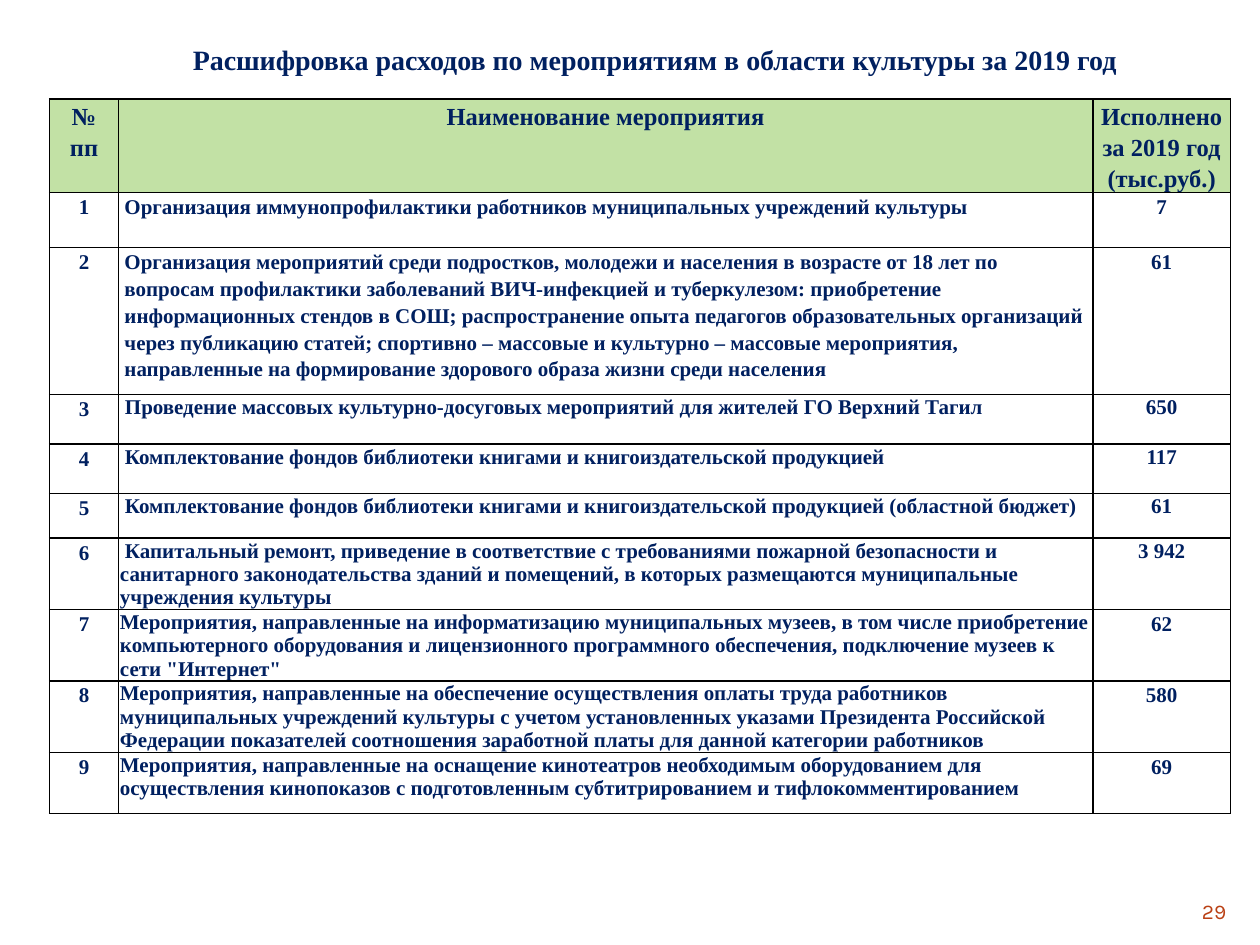
from lxml.etree import SubElement
from pptx import Presentation
from pptx.dml.color import RGBColor
from pptx.enum.text import MSO_ANCHOR as Anchor, MSO_AUTO_SIZE as AutoSize, PP_ALIGN as Align
from pptx.oxml.ns import qn
from pptx.util import Cm, Pt

TITLE = "Расшифровка расходов по мероприятиям в области культуры за 2019 год"
PAGE = "29"
HEADER = ("№\nпп", "Наименование мероприятия", "Исполнено\nза 2019 год\n(тыс.руб.)")
ACTIVITIES = [
    ("Организация иммунопрофилактики работников муниципальных учреждений культуры", "7"),
    ("Организация мероприятий среди подростков, молодежи и населения в возрасте от 18 лет по "
     "вопросам профилактики заболеваний ВИЧ-инфекцией и туберкулезом: приобретение "
     "информационных стендов в СОШ; распространение опыта педагогов образовательных организаций "
     "через публикацию статей; спортивно – массовые и культурно – массовые мероприятия, "
     "направленные на формирование здорового образа жизни среди населения", "61"),
    ("Проведение массовых культурно-досуговых мероприятий для жителей ГО Верхний Тагил", "650"),
    ("Комплектование фондов библиотеки книгами и книгоиздательской продукцией", "117"),
    ("Комплектование фондов библиотеки книгами и книгоиздательской продукцией "
     "(областной бюджет)", "61"),
    ("Капитальный ремонт, приведение в соответствие с требованиями пожарной безопасности и "
     "санитарного законодательства зданий и помещений, в которых размещаются муниципальные "
     "учреждения культуры", "3 942"),
    ("Мероприятия, направленные на информатизацию муниципальных музеев, в том числе приобретение "
     "компьютерного оборудования и лицензионного программного обеспечения, подключение музеев к "
     "сети \"Интернет\"", "62"),
    ("Мероприятия, направленные на обеспечение осуществления оплаты труда работников "
     "муниципальных учреждений культуры с учетом установленных указами Президента Российской "
     "Федерации показателей соотношения заработной платы для данной категории работников", "580"),
    ("Мероприятия, направленные на оснащение кинотеатров необходимым оборудованием для "
     "осуществления кинопоказов с подготовленным субтитрированием и тифлокомментированием", "69"),
]
COLUMN_WIDTHS = (1.39, 19.64, 2.78)
ROW_HEIGHTS = (1.88, 1.11, 2.96, 1, 1, 0.89, 1.43, 1.44, 1.43, 1.23)
COMPACT_CELLS = {1: range(3, 10), 2: range(3, 7)}
INDENTED_ROWS = range(3, 7)
COLORS = {"text": "002060", "header": "C2E1A5", "body": "FFFFFF",
          "border": "000000", "page": "BA4014"}


def style_text(frame, size, color, align, font="Times New Roman", bold=True, spacing=None):
    for paragraph in frame.paragraphs:
        paragraph.alignment = align
        if spacing:
            paragraph.line_spacing = spacing
        for run in paragraph.runs:
            run.font.name = font
            run.font.size = Pt(size)
            run.font.bold = bold
            run.font.color.rgb = RGBColor.from_string(COLORS[color])


def add_borders(cell):
    properties = cell._tc.get_or_add_tcPr()
    for position, side in enumerate(("a:lnL", "a:lnR", "a:lnT", "a:lnB")):
        line = properties.makeelement(qn(side), {"w": str(Pt(1))})
        fill = SubElement(line, qn("a:solidFill"))
        SubElement(fill, qn("a:srgbClr"), val=COLORS["border"])
        properties.insert(position, line)


def fill_cell(cell, text, row, column):
    compact = row in COMPACT_CELLS.get(column, ())
    side = 0.1 if row == 0 else 0.03 if compact else 0.12
    cell.margin_left = cell.margin_right = Cm(side)
    cell.margin_top = Cm(0.03 if compact else 0)
    cell.margin_bottom = 0
    cell.text_frame.text = text
    align = Align.LEFT if row and column == 1 else Align.CENTER
    style_text(cell.text_frame, 12 if row else 14, "text", align,
               spacing=None if compact else 1.15)
    if column == 1 and row in INDENTED_ROWS:
        cell.text_frame.paragraphs[0]._p.get_or_add_pPr().set("indent", str(Cm(0.1)))
    cell.fill.solid()
    cell.fill.fore_color.rgb = RGBColor.from_string(COLORS["body" if row else "header"])
    add_borders(cell)


def main():
    deck = Presentation()
    deck.slide_width, deck.slide_height = Cm(25.4), Cm(19.05)
    slide = deck.slides.add_slide(deck.slide_layouts[5])

    title = slide.shapes.title
    title.left, title.top, title.width, title.height = Cm(1), Cm(0.69), Cm(24.4), Cm(1)
    title.text_frame.text = TITLE
    title.text_frame.auto_size = AutoSize.NONE
    title.text_frame.vertical_anchor = Anchor.MIDDLE
    style_text(title.text_frame, 16, "text", Align.CENTER)

    rows = [HEADER] + [(str(number), *activity)
                       for number, activity in enumerate(ACTIVITIES, 1)]
    expenses = slide.shapes.add_table(
        len(rows), len(HEADER), Cm(1), Cm(2),
        Cm(sum(COLUMN_WIDTHS)), Cm(sum(ROW_HEIGHTS))).table
    expenses.horz_banding = False
    for column, width in zip(expenses.columns, COLUMN_WIDTHS):
        column.width = Cm(width)
    for row, (texts, height) in enumerate(zip(rows, ROW_HEIGHTS)):
        expenses.rows[row].height = Cm(height)
        for column, text in enumerate(texts):
            fill_cell(expenses.cell(row, column), text, row, column)

    page = slide.shapes.add_textbox(Cm(22.86), Cm(17.98), Cm(2.11), Cm(0.69))
    page.text_frame.word_wrap = True
    page.text_frame.text = PAGE
    style_text(page.text_frame, 12, "page", Align.RIGHT, font="Karla", bold=False)

    deck.save("out.pptx")


if __name__ == "__main__":
    main()
